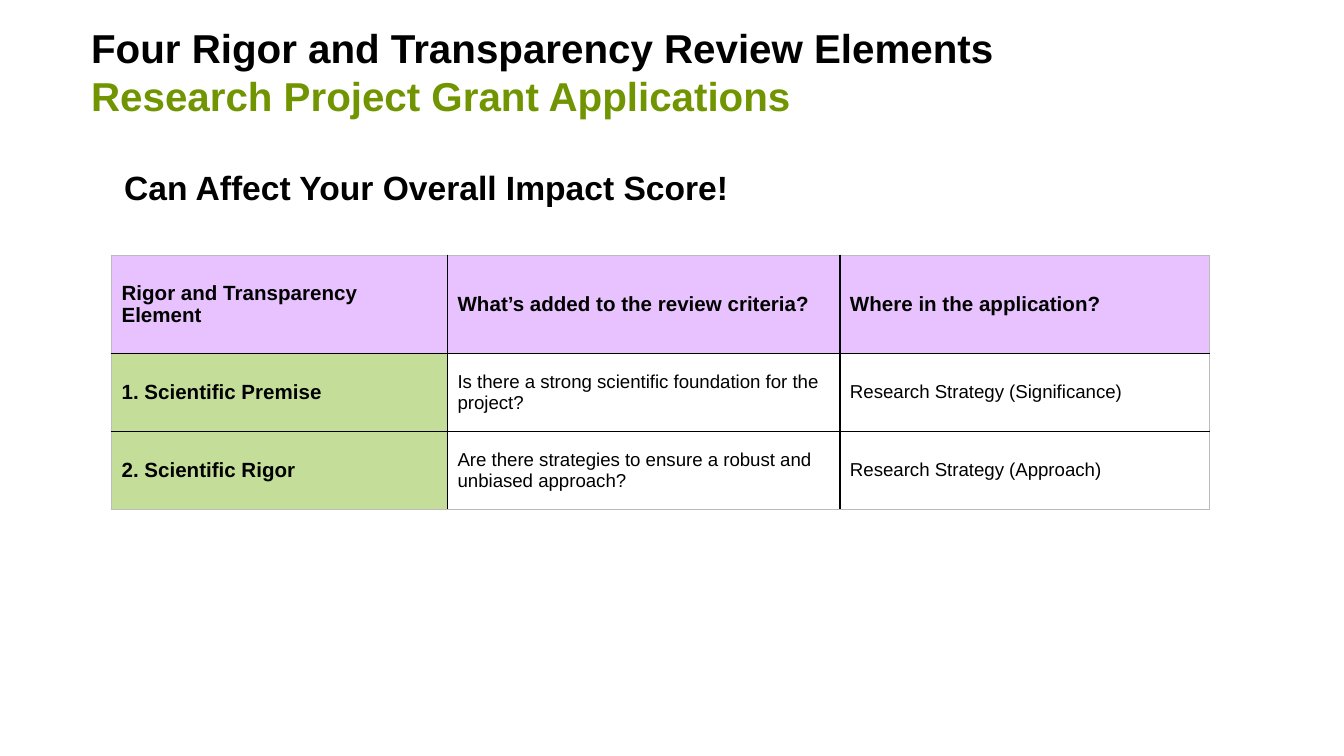
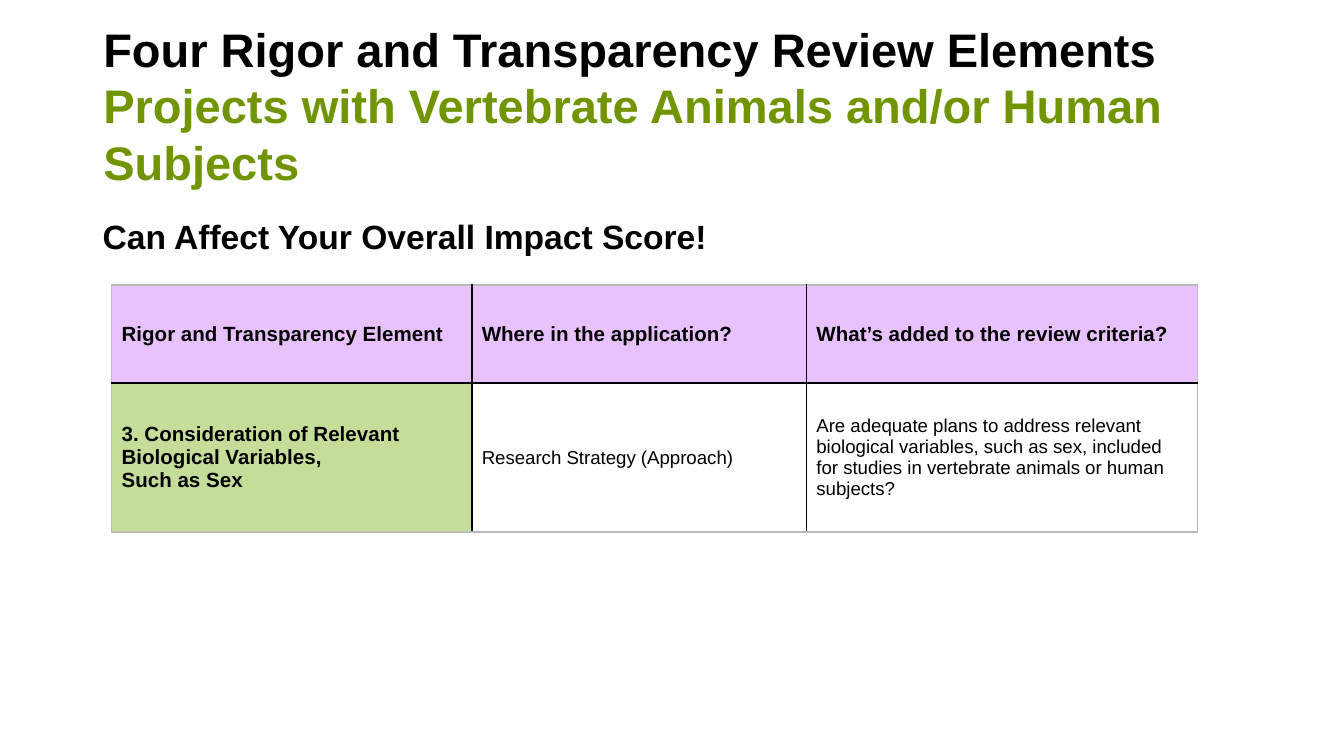
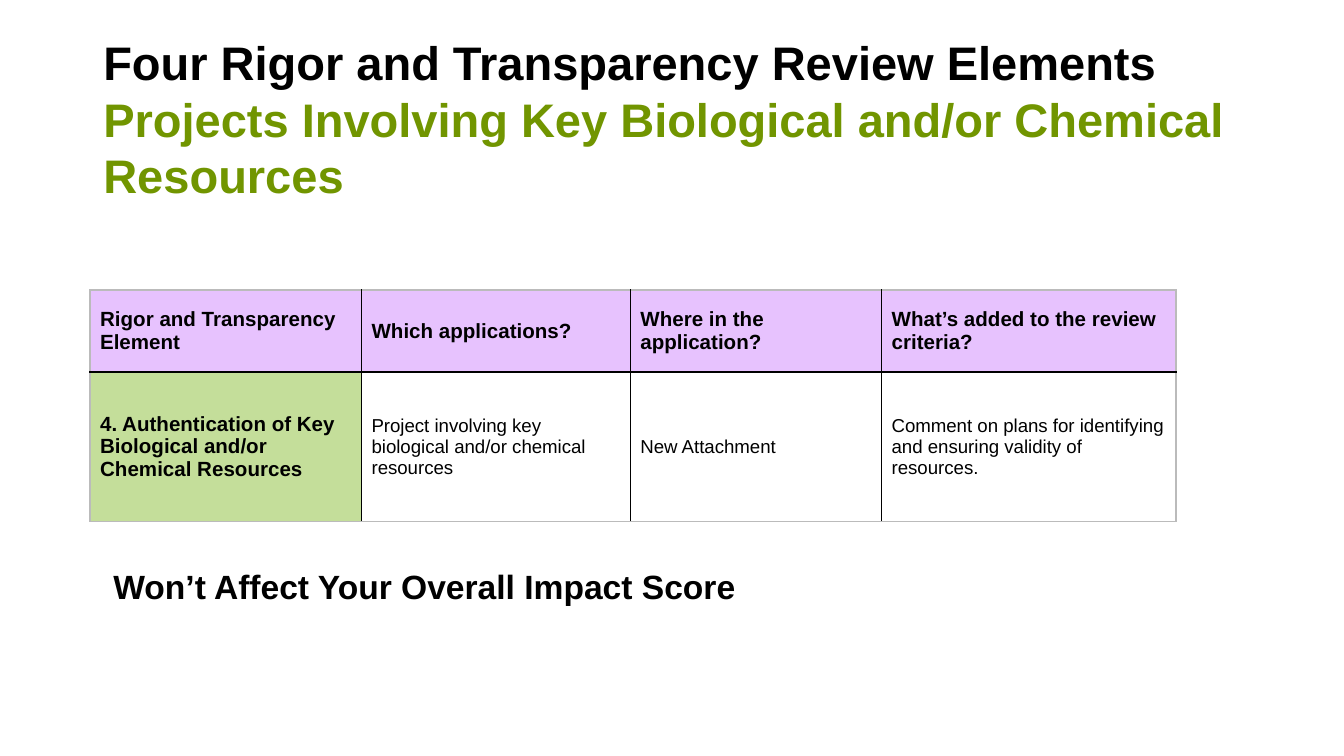
from lxml.etree import SubElement
from pptx import Presentation
from pptx.dml.color import RGBColor
from pptx.enum.text import MSO_ANCHOR as Anchor
from pptx.oxml.ns import qn
from pptx.util import Inches, Pt

COLORS = {
    "ink": "000000",
    "subtitle": "719500",
    "header": "E7C2FE",
    "element": "C4DE9A",
    "paper": "FFFFFF",
    "frame": "BBBBBB",
}
FONT = "Arial"
HEADING = "Four Rigor and Transparency Review Elements"
ELEMENT = "Rigor and Transparency Element"
CRITERIA = "What’s added to the review criteria?"
PLACE = "Where in the application?"
AFFECTS = "Can Affect Your Overall Impact Score!"

SLIDES = [
    {
        "subtitle": "Research Project Grant Applications",
        "title_box": (0.58, 0.19, 8.73, 0.68),
        "title_size": 21.6,
        "score": AFFECTS,
        "score_box": (0.83, 1.19, 4.92, 0.4),
        "table_at": (0.83, 1.9),
        "columns": (2.5, 2.92, 2.75),
        "heights": (0.73, 0.58, 0.58),
        "rows": [
            (ELEMENT, CRITERIA, PLACE),
            ("1. Scientific Premise",
             "Is there a strong scientific foundation for the project?",
             "Research Strategy (Significance)"),
            ("2. Scientific Rigor",
             "Are there strategies to ensure a robust and unbiased approach?",
             "Research Strategy (Approach)"),
        ],
    },
    {
        "subtitle": "Projects with Vertebrate Animals and/or Human Subjects",
        "title_box": (0.67, 0.25, 9.08, 1.06),
        "title_size": 25.2,
        "score": AFFECTS,
        "score_box": (0.67, 1.56, 4.92, 0.4),
        "table_at": (0.83, 2.12),
        "columns": (2.68, 2.49, 2.91),
        "heights": (0.73, 1.11),
        "rows": [
            (ELEMENT, PLACE, CRITERIA),
            ("3. Consideration of Relevant Biological Variables,\nSuch as Sex",
             "Research Strategy (Approach)",
             "Are adequate plans to address relevant biological variables, such as sex, "
             "included for studies in vertebrate animals or human subjects?"),
        ],
    },
    {
        "subtitle": "Projects Involving Key Biological and/or Chemical Resources",
        "title_box": (0.67, 0.38, 8.75, 1),
        "title_size": 25.2,
        "score": "Won’t Affect Your Overall Impact Score",
        "score_box": (0.75, 4.16, 5.58, 0.4),
        "table_at": (0.67, 2.16),
        "columns": (2.02, 2, 1.87, 2.19),
        "heights": (0.61, 1.11),
        "rows": [
            (ELEMENT, "Which applications?", PLACE, CRITERIA),
            ("4. Authentication of Key Biological and/or Chemical Resources",
             "Project involving key biological and/or chemical resources",
             "New Attachment",
             "Comment on plans for identifying and ensuring validity of resources."),
        ],
    },
]


def color(name):
    return RGBColor.from_string(COLORS[name])


def set_font(font, size, bold=True):
    font.name, font.size, font.bold = FONT, Pt(size), bold
    font.color.rgb = color("ink")


def set_margins(target, across, down):
    target.margin_left = target.margin_right = Pt(across)
    target.margin_top = target.margin_bottom = Pt(down)


def add_box(page, place, margin):
    box = page.shapes.add_textbox(*map(Inches, place))
    frame = box.text_frame
    frame.word_wrap = True
    set_margins(frame, margin, 3.6)
    return box


def add_title(page, subtitle, place, size):
    frame = add_box(page, place, 7.2).text_frame
    frame.vertical_anchor = Anchor.MIDDLE
    para = frame.paragraphs[0]
    para.add_run().text = HEADING
    para.add_line_break()
    span = para.add_run()
    span.text = subtitle
    set_font(para.font, size)
    span.font.color.rgb = color("subtitle")


def add_score(page, text, place):
    box = add_box(page, place, 6.75)
    box.fill.solid()
    box.fill.fore_color.rgb = color("paper")
    para = box.text_frame.paragraphs[0]
    para.text = text
    set_font(para.font, 18)


def set_borders(cell, outer):
    properties = cell._tc.get_or_add_tcPr()
    for position, (side, is_outer) in enumerate(outer.items()):
        line = SubElement(properties, qn(f"a:ln{side}"), w=str(Pt(1)))
        fill = SubElement(line, qn("a:solidFill"))
        SubElement(fill, qn("a:srgbClr"), val=COLORS["frame" if is_outer else "ink"])
        properties.insert(position, line)


def add_table(page, rows, corner, columns, heights):
    size = (sum(columns), sum(heights))
    table = page.shapes.add_table(
        len(rows), len(columns), *map(Inches, corner + size)).table
    table.first_row = table.horz_banding = False
    for column, width in zip(table.columns, columns):
        column.width = Inches(width)
    for r, (texts, height) in enumerate(zip(rows, heights)):
        table.rows[r].height = Inches(height)
        for c, text in enumerate(texts):
            cell = table.cell(r, c)
            cell.text = text
            cell.vertical_anchor = Anchor.MIDDLE
            set_margins(cell, 5.4, 2.7)
            label = r == 0 or c == 0
            for para in cell.text_frame.paragraphs:
                set_font(para.font, 11 if label else 10, label)
            cell.fill.solid()
            cell.fill.fore_color.rgb = color(
                "header" if r == 0 else "element" if c == 0 else "paper")
            set_borders(cell, {"L": c == 0, "R": c == len(columns) - 1,
                               "T": r == 0, "B": r == len(rows) - 1})


def main():
    deck = Presentation()
    deck.slide_width = Inches(10)
    deck.slide_height = deck.slide_width * 9 // 16
    for item in SLIDES:
        page = deck.slides.add_slide(deck.slide_layouts[6])
        add_table(page, item["rows"], item["table_at"], item["columns"], item["heights"])
        add_score(page, item["score"], item["score_box"])
        add_title(page, item["subtitle"], item["title_box"], item["title_size"])
    deck.save("out.pptx")


if __name__ == "__main__":
    main()
